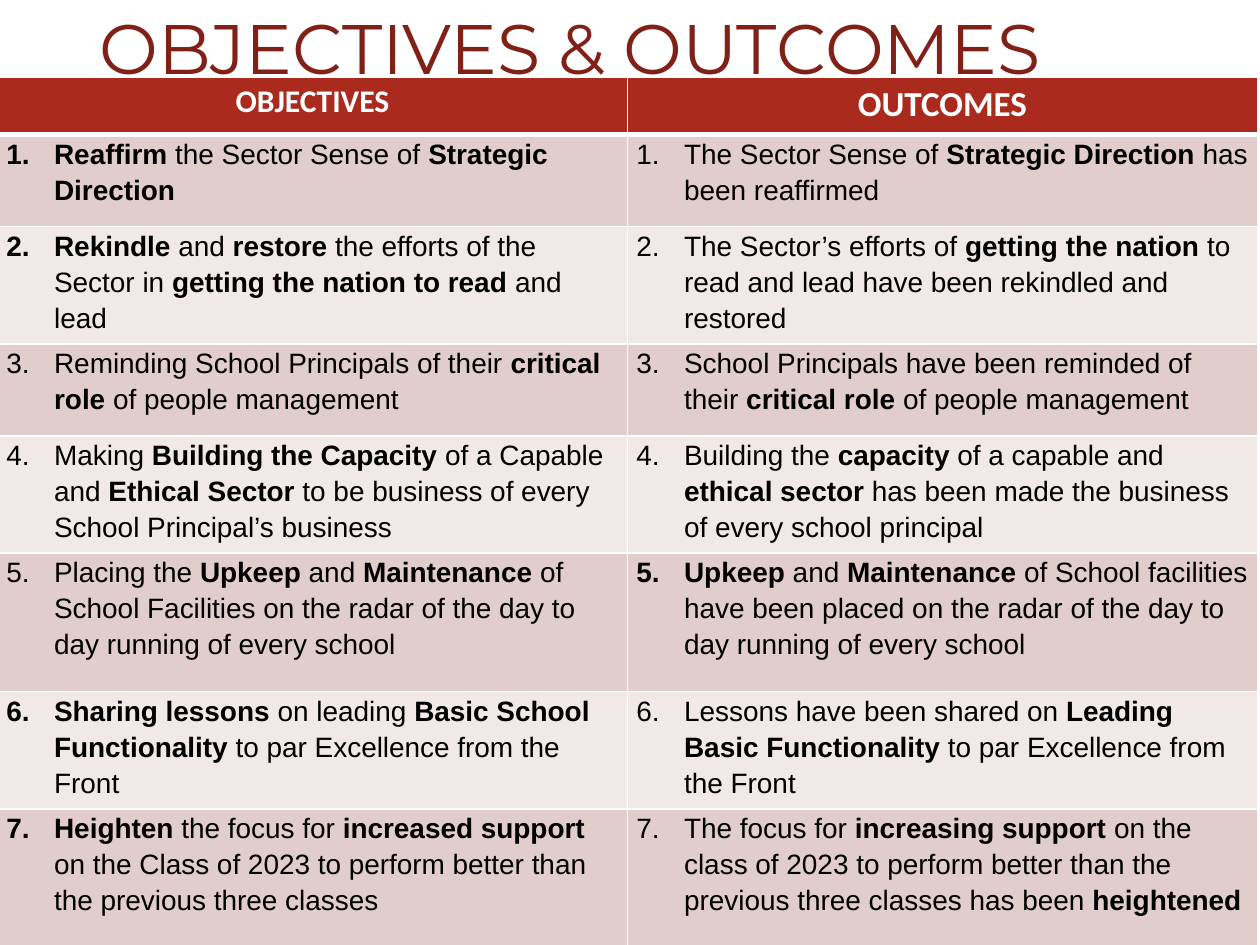
from lxml import etree
from pptx import Presentation
from pptx.dml.color import RGBColor
from pptx.enum import text
from pptx.oxml.ns import qn
from pptx.util import Inches, Pt

TITLE = "OBJECTIVES & OUTCOMES"
HEADERS = [("OBJECTIVES", 18), ("OUTCOMES", 20)]
BOLD_MARK = "*"
ROWS = [
    (0.73, "*Reaffirm* the Sector Sense of *Strategic Direction*",
     "The Sector Sense of *Strategic Direction *has been reaffirmed"),
    (0.93, "*Rekindle* and *restore *the efforts of the Sector in *getting the nation to read *and lead",
     "The Sector’s efforts of *getting the nation *to read and lead have been rekindled and restored"),
    (0.73, "Reminding School Principals of their *critical role *of people management",
     "School Principals have been reminded of their *critical role *of people management"),
    (0.93, "Making *Building the Capacity *of a Capable and *Ethical Sector *to be business of every "
     "School Principal’s business",
     "Building the *capacity* of a capable and *ethical sector *has been made the business of every "
     "school principal"),
    (1.1, "Placing the *Upkeep *and *Maintenance *of School Facilities on the radar of the day to day "
     "running of every school",
     "*Upkeep* and* Maintenance *of School facilities have been placed on the radar of the day to day "
     "running of every school"),
    (0.93, "*Sharing lessons *on leading *Basic School Functionality* to par Excellence from the Front",
     "Lessons have been shared on *Leading Basic Functionality* to par Excellence from the Front"),
    (1.1, "*Heighten* the focus for *increased support *on the Class of 2023 to perform better than "
     "the previous three classes",
     "The focus for *increasing support *on the class of 2023 to perform better than the previous "
     "three classes has been *heightened*"),
]
HEADER_HEIGHT = 0.46
COLORS = {"title": "802017", "header": "AA2B1E", "odd": "E2CDCD", "even": "F1E8E8",
          "white": "FFFFFF", "black": "000000"}


def rgb(name):
    return RGBColor.from_string(COLORS[name])


def style_font(font, name, size, color, bold=False):
    font.name = name
    font.size = Pt(size)
    font.bold = bold
    font.color.rgb = rgb(color)


def style_cell(cell, fill, top=1, bottom=1):
    cell.margin_left = cell.margin_right = Inches(0.07)
    cell.margin_top = cell.margin_bottom = 0
    properties = cell._tc.get_or_add_tcPr()
    for side, width in (("L", 1), ("R", 1), ("T", top), ("B", bottom)):
        line = etree.SubElement(properties, qn("a:ln" + side), w=str(Pt(width)))
        solid = etree.SubElement(line, qn("a:solidFill"))
        etree.SubElement(solid, qn("a:srgbClr"), val=COLORS["white"])
    cell.fill.solid()
    cell.fill.fore_color.rgb = rgb(fill)
    paragraph = cell.text_frame.paragraphs[0]
    paragraph.line_spacing = 1.15
    return paragraph


def number_paragraph(paragraph, number):
    properties = paragraph._p.get_or_add_pPr()
    properties.set("marL", str(Inches(0.38)))
    properties.set("indent", str(-Inches(0.38)))
    etree.SubElement(properties, qn("a:buFont"), typeface="+mj-lt")
    etree.SubElement(properties, qn("a:buAutoNum"), type="arabicPeriod", startAt=str(number))


def add_marked_text(paragraph, content):
    for index, part in enumerate(content.split(BOLD_MARK)):
        if part:
            run = paragraph.add_run()
            run.text = part
            style_font(run.font, "Arial", 16, "black", bold=index % 2 == 1)


def add_goal_table(slide):
    heights = [HEADER_HEIGHT] + [row[0] for row in ROWS]
    frame = slide.shapes.add_table(len(heights), len(HEADERS), Inches(-0.02), Inches(0.61),
                                   Inches(10), Inches(sum(heights)))
    table = frame.table
    for row, height in zip(table.rows, heights):
        row.height = Inches(height)
    for column, (label, size) in enumerate(HEADERS):
        table.columns[column].width = Inches(5)
        cell = table.cell(0, column)
        cell.text_frame.text = label
        paragraph = style_cell(cell, "header", bottom=3)
        paragraph.alignment = text.PP_ALIGN.CENTER
        style_font(paragraph.runs[0].font, "Calibri", size, "white", bold=True)
    for number, (_, *contents) in enumerate(ROWS, start=1):
        for column, content in enumerate(contents):
            paragraph = style_cell(table.cell(number, column), "odd" if number % 2 else "even",
                                   top=3 if number == 1 else 1)
            number_paragraph(paragraph, number)
            add_marked_text(paragraph, content)


def add_title(slide):
    box = slide.shapes.add_textbox(Inches(-0.2), Inches(-0.01), Inches(9.45), Inches(0.77))
    box.text_frame.word_wrap = True
    box.text_frame.text = TITLE
    paragraph = box.text_frame.paragraphs[0]
    paragraph.alignment = text.PP_ALIGN.CENTER
    style_font(paragraph.runs[0].font, "Montserrat", 40, "title")


def main():
    presentation = Presentation()
    presentation.slide_width = Inches(10)
    presentation.slide_height = Inches(7.5)
    slide = presentation.slides.add_slide(presentation.slide_layouts[6])
    add_goal_table(slide)
    add_title(slide)
    presentation.save("out.pptx")


if __name__ == "__main__":
    main()
